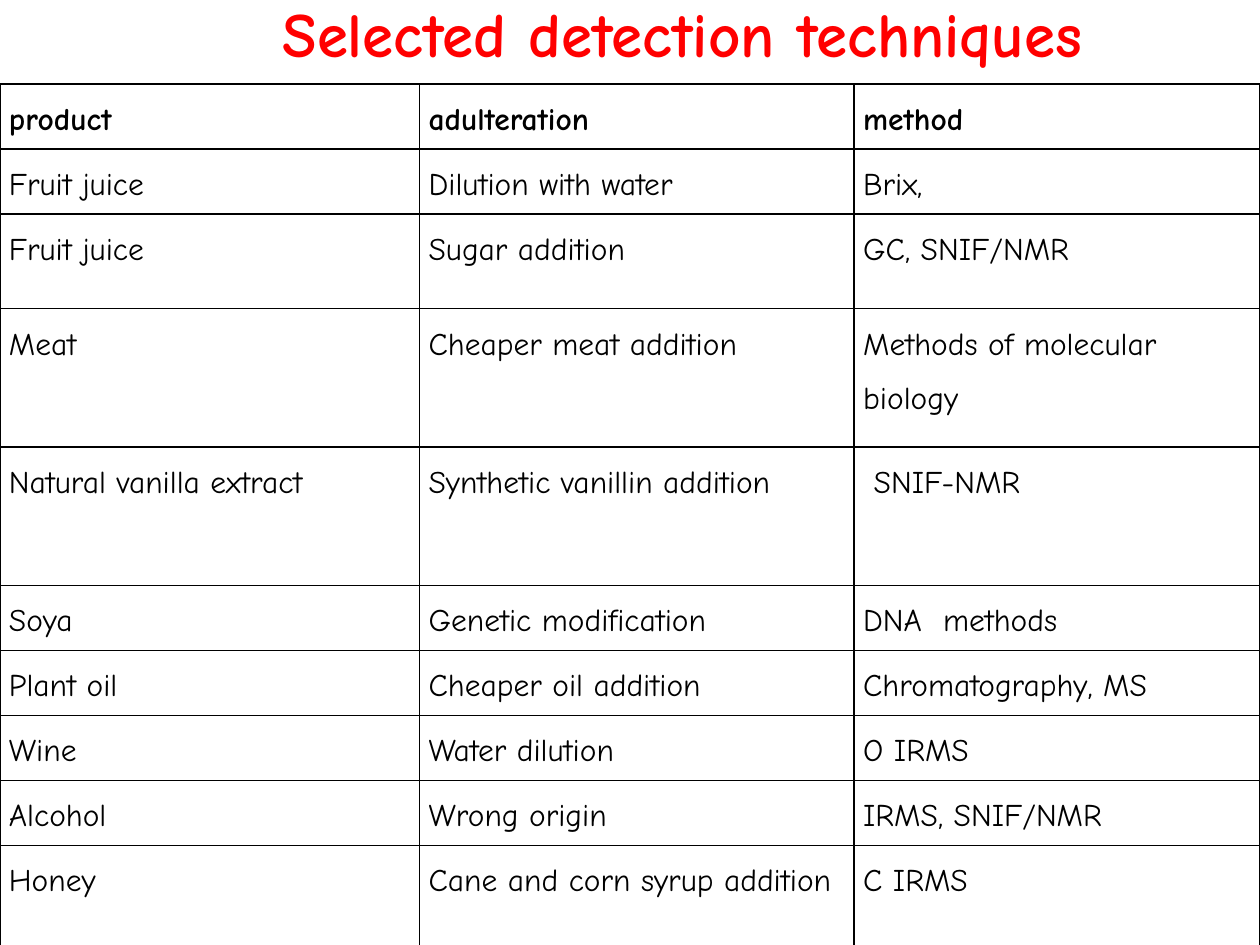
from dataclasses import dataclass

from lxml import etree
from pptx import Presentation
from pptx import util as u
from pptx.dml.color import RGBColor
from pptx.enum import text
from pptx.oxml import ns


@dataclass(frozen=True)
class Theme:
    font: str = "Comic Neue"
    ink: str = "000000"
    head: str = "FF0000"
    title: int = 36
    body: int = 18
    rule: int = 1


THEME = Theme()
COLS = (8.46, 8.76, 8.18)
LOW, MID, TALL = 1.31, 1.91, 2.79
ROWS = (
    (LOW, "product", "adulteration", "method"),
    (LOW, "Fruit juice", "Dilution with water", "Brix,"),
    (MID, "Fruit juice", "Sugar addition", "GC, SNIF/NMR"),
    (TALL, "Meat", "Cheaper meat addition", "Methods of molecular biology"),
    (TALL, "Natural vanilla extract", "Synthetic vanillin addition", " SNIF-NMR"),
    (LOW, "Soya", "Genetic modification", "DNA  methods"),
    (LOW, "Plant oil", "Cheaper oil addition", "Chromatography, MS"),
    (LOW, "Wine", "Water dilution", "O IRMS"),
    (LOW, "Alcohol", "Wrong origin", "IRMS, SNIF/NMR"),
    (TALL, "Honey", "Cane and corn syrup addition", "C IRMS"),
)


def style(para, size, color, bold):
    for run in para.runs:
        run.font.name = THEME.font
        run.font.size = u.Pt(size)
        run.font.bold = bold
        run.font.color.rgb = RGBColor.from_string(color)


def frame(cell):
    """Draw a solid rule on all four sides of a cell."""
    props = cell._tc.get_or_add_tcPr()
    for place, side in enumerate(("lnL", "lnR", "lnT", "lnB")):
        line = etree.Element(ns.qn(f"a:{side}"), w=str(u.Pt(THEME.rule)))
        fill = etree.SubElement(line, ns.qn("a:solidFill"))
        etree.SubElement(fill, ns.qn("a:srgbClr"), val=THEME.ink)
        props.insert(place, line)


def fill_cell(cell, words, bold):
    cell.margin_left = cell.margin_right = u.Cm(0.18)
    cell.margin_top = cell.margin_bottom = 0
    cell.fill.background()
    frame(cell)
    cell.text_frame.text = words
    para = cell.text_frame.paragraphs[0]
    para.line_spacing = 1.5
    style(para, THEME.body, THEME.ink, bold)


def add_grid(slide):
    high = sum(row[0] for row in ROWS)
    grid = slide.shapes.add_table(
        len(ROWS), len(COLS), 0, u.Cm(1.69), u.Cm(sum(COLS)), u.Cm(high)
    ).table
    grid.first_row = grid.horz_banding = False
    for col, wide in zip(grid.columns, COLS):
        col.width = u.Cm(wide)
    for r, (tall, *words) in enumerate(ROWS):
        grid.rows[r].height = u.Cm(tall)
        for c, word in enumerate(words):
            fill_cell(grid.cell(r, c), word, bold=r == 0)


def add_title(slide, words):
    box = slide.shapes.add_textbox(u.Cm(2.12), u.Cm(-0.25), u.Cm(23.28), u.Cm(1.8))
    body = box.text_frame
    body.word_wrap = True
    body.auto_size = text.MSO_AUTO_SIZE.SHAPE_TO_FIT_TEXT
    body.vertical_anchor = text.MSO_ANCHOR.MIDDLE
    body.text = words
    para = body.paragraphs[0]
    para.alignment = text.PP_ALIGN.CENTER
    style(para, THEME.title, THEME.head, True)


def main():
    deck = Presentation()
    deck.slide_width, deck.slide_height = u.Cm(25.4), u.Cm(19.05)
    slide = deck.slides.add_slide(deck.slide_layouts[6])
    add_grid(slide)
    add_title(slide, "Selected detection techniques")
    deck.save("out.pptx")


if __name__ == "__main__":
    main()
